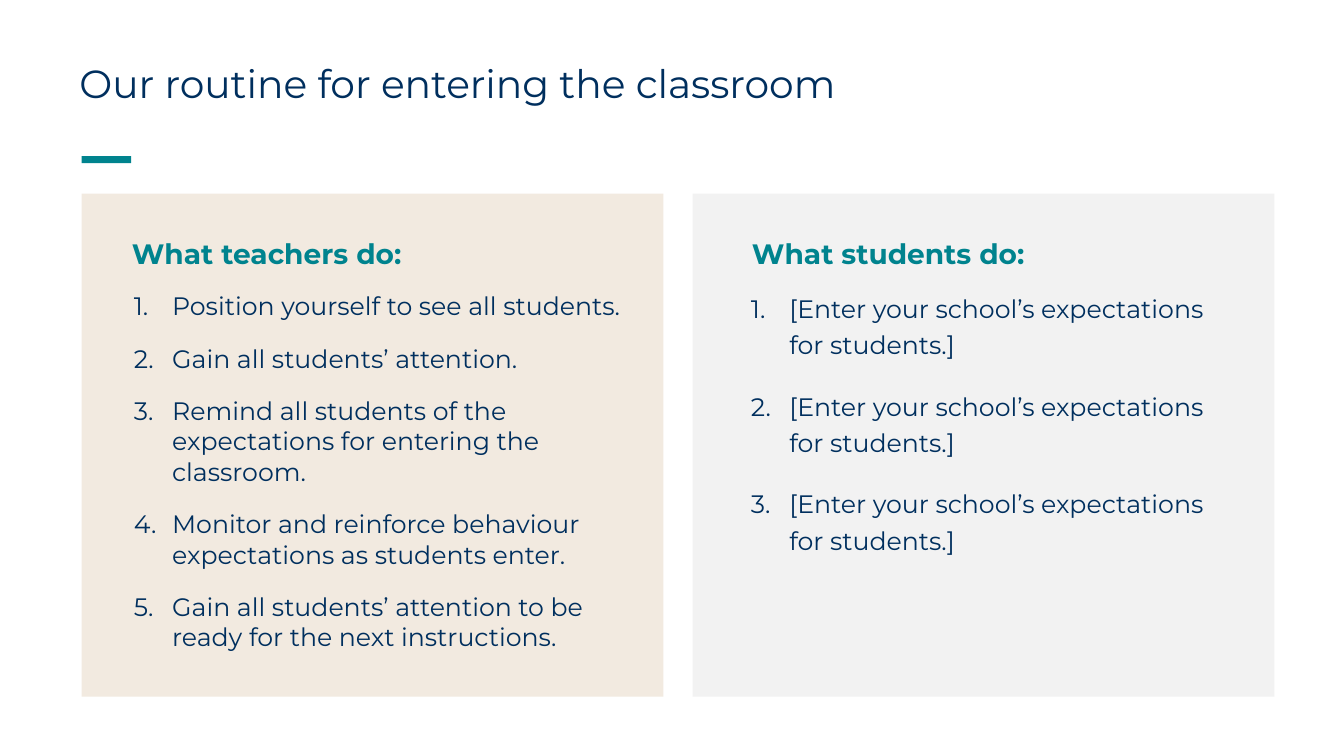
from lxml import etree
from pptx import Presentation
from pptx.dml.color import RGBColor
from pptx.enum.shapes import MSO_SHAPE
from pptx.enum.text import MSO_ANCHOR
from pptx.oxml.ns import qn
from pptx.util import Inches, Pt

RECT = MSO_SHAPE.RECTANGLE
TOP, MIDDLE = MSO_ANCHOR.TOP, MSO_ANCHOR.MIDDLE
FONT = "Montserrat"
COLORS = {"navy": "002F5E", "teal": "00838E", "sand": "F2EAE0", "grey": "F2F2F2"}
PANEL_TOP, PANEL_W, PANEL_H = 1.92, 5.77, 4.99
LEFT, PANEL_GAP = 0.81, 0.29

TEACHER_STEPS = [
    "Position yourself to see all students.",
    "Gain all students’ attention.",
    "Remind all students of the expectations for entering the classroom.",
    "Monitor and reinforce behaviour expectations as students enter.",
    "Gain all students’ attention to be ready for the next instructions.",
]
STUDENT_STEPS = ["[Enter your school’s expectations for students.]"] * 3


def add_rect(s, x, y, w, h, color):
    sp = s.shapes.add_shape(RECT, Inches(x), Inches(y), Inches(w), Inches(h))
    sp.shadow.inherit = False
    sp.fill.solid()
    sp.fill.fore_color.rgb = RGBColor.from_string(COLORS[color])
    sp.line.fill.background()


def add_text(s, x, y, w, h, lines, size, color, bold=False, spacing=None,
             after=0, anchor=TOP):
    tf = s.shapes.add_textbox(Inches(x), Inches(y), Inches(w), Inches(h)).text_frame
    tf.word_wrap = True
    tf.vertical_anchor = anchor
    tf.text = "\n".join(lines)
    for p in tf.paragraphs:
        p.font.name = FONT
        p.font.size = Pt(size)
        p.font.bold = bold
        p.font.color.rgb = RGBColor.from_string(COLORS[color])
        p.space_after = Pt(after)
        if spacing:
            p.line_spacing = spacing
    return tf


def number_paragraphs(tf, indent=0.38):
    for p in tf.paragraphs:
        pPr = p._p.get_or_add_pPr()
        pPr.set("marL", str(Inches(indent)))
        pPr.set("indent", str(-Inches(indent)))
        bullet = etree.Element(qn("a:buAutoNum"), type="arabicPeriod")
        pPr.find(qn("a:defRPr")).addprevious(bullet)


def add_header(s, x, y, w):
    add_text(s, x - 0.12, y, w, 0.55, ["Our routine for entering the classroom"],
             28, "navy", spacing=0.9, anchor=MIDDLE)
    add_rect(s, x, y + 0.97, 0.49, 0.07, "teal")


def add_panel(s, x, y, w, h, fill, heading, heading_dx, steps, steps_box,
              spacing, after):
    add_rect(s, x, y, w, h, fill)
    add_text(s, x + heading_dx, y + 0.38, w - heading_dx - 0.1, 0.44, [heading],
             20, "teal", bold=True)
    dx, dy, steps_w, steps_h = steps_box
    tf = add_text(s, x + dx, y + dy, steps_w, steps_h, steps, 18, "navy",
                  spacing=spacing, after=after)
    number_paragraphs(tf)


def main():
    prs = Presentation()
    prs.slide_width, prs.slide_height = Inches(13.33), Inches(7.5)
    s = prs.slides.add_slide(prs.slide_layouts[6])
    add_header(s, LEFT, 0.58, 11.94)
    add_panel(s, LEFT, PANEL_TOP, PANEL_W, PANEL_H, "sand", "What teachers do:",
              0.4, TEACHER_STEPS, (0.42, 0.91, 5.27, 3.72), None, 16)
    add_panel(s, LEFT + PANEL_W + PANEL_GAP, PANEL_TOP, PANEL_W, PANEL_H, "grey",
              "What students do:", 0.49, STUDENT_STEPS, (0.48, 0.88, 4.99, 2.76),
              1.2, 18)
    prs.save("out.pptx")


if __name__ == "__main__":
    main()
